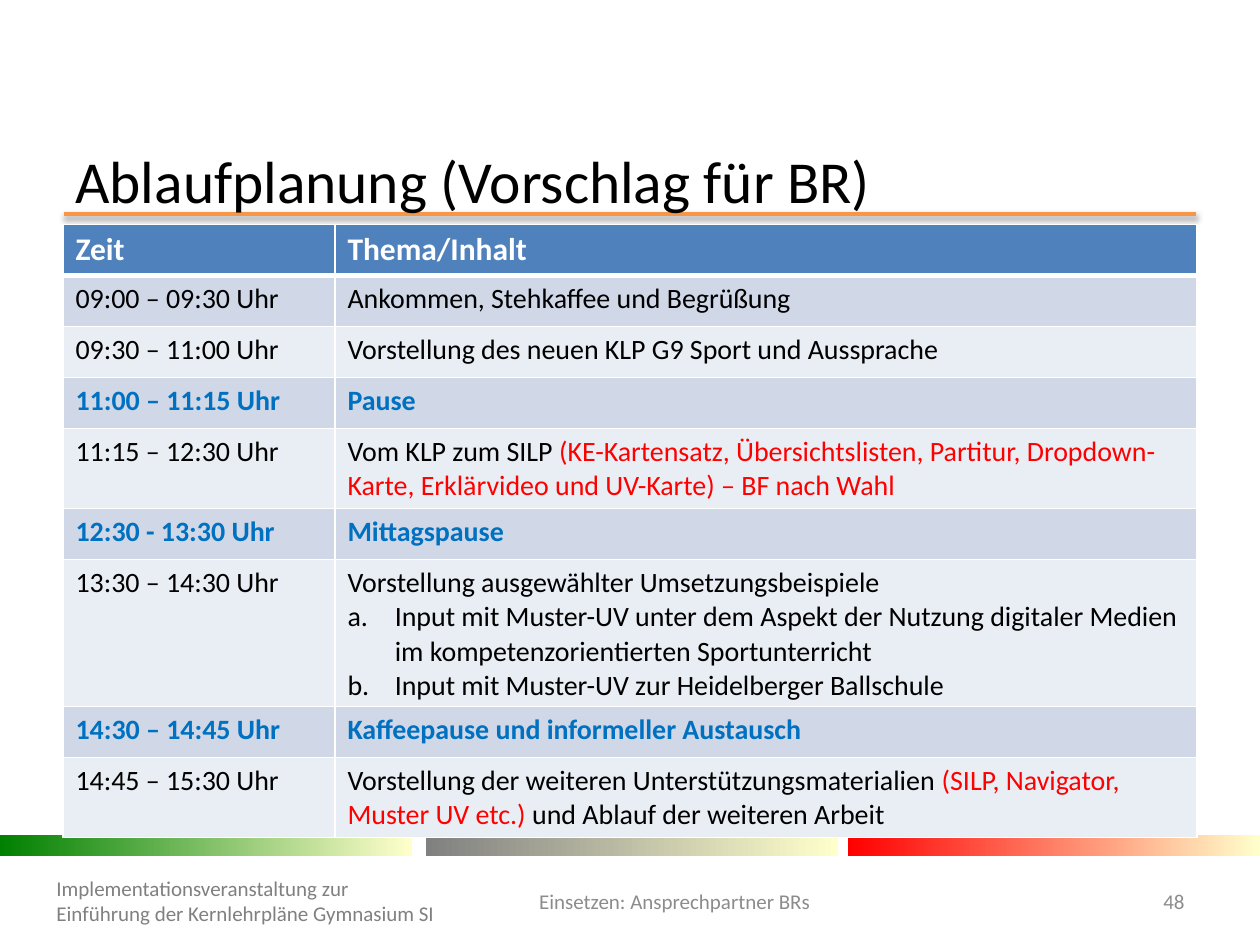
from typing import NamedTuple

from lxml.etree import SubElement as Sub
from pptx import Presentation
from pptx.dml.color import RGBColor as RGB
from pptx.enum.shapes import MSO_CONNECTOR as Link, MSO_SHAPE as Shape
from pptx.enum.text import MSO_ANCHOR as Anchor, PP_ALIGN as Align
from pptx.oxml.ns import qn
from pptx.util import Pt

FONT = "Calibri"
BLACK = RGB(0x00, 0x00, 0x00)
WHITE = RGB(0xFF, 0xFF, 0xFF)
RED = RGB(0xFF, 0x00, 0x00)
BLUE = RGB(0x00, 0x70, 0xC0)
GREEN = RGB(0x00, 0x80, 0x00)
GRAY = RGB(0x80, 0x80, 0x80)
SOFT = RGB(0x8C, 0x8C, 0x8C)
CREAM = RGB(0xFF, 0xFF, 0xCC)
AMBER = RGB(0xF7, 0x96, 0x46)
HEAD = RGB(0x4F, 0x81, 0xBD)
BANDS = RGB(0xE9, 0xED, 0xF4), RGB(0xD0, 0xD8, 0xE8)


class Run(NamedTuple):
    text: str
    color: RGB = BLACK


class Slot(NamedTuple):
    time: str
    runs: list[Run]
    steps: tuple[str, ...] = ()
    pause: bool = False


class Bar(NamedTuple):
    left: float
    color: RGB


class Label(NamedTuple):
    text: str
    left: float
    top: float
    width: float
    height: float
    size: float = 12
    color: RGB = SOFT
    align: Align = Align.LEFT


SLOTS = [
    Slot("09:00 – 09:30 Uhr", [Run("Ankommen, Stehkaffee und Begrüßung")]),
    Slot("09:30 – 11:00 Uhr",
         [Run("Vorstellung des neuen KLP G9 Sport und Aussprache")]),
    Slot("11:00 – 11:15 Uhr", [Run("Pause", BLUE)], pause=True),
    Slot("11:15 – 12:30 Uhr",
         [Run("Vom KLP zum SILP "),
          Run("(KE-Kartensatz, Übersichtslisten, Partitur, Dropdown-Karte, "
              "Erklärvideo und UV-Karte) – BF nach Wahl", RED)]),
    Slot("12:30 - 13:30 Uhr", [Run("Mittagspause", BLUE)], pause=True),
    Slot("13:30 – 14:30 Uhr",
         [Run("Vorstellung ausgewählter Umsetzungsbeispiele")],
         ("Input mit Muster-UV unter dem Aspekt der Nutzung digitaler Medien "
          "im kompetenzorientierten Sportunterricht",
          "Input mit Muster-UV zur Heidelberger Ballschule")),
    Slot("14:30 – 14:45 Uhr",
         [Run("Kaffeepause und informeller Austausch", BLUE)], pause=True),
    Slot("14:45 – 15:30 Uhr",
         [Run("Vorstellung der weiteren Unterstützungsmaterialien "),
          Run("(SILP, Navigator, Muster UV etc.) ", RED),
          Run("und Ablauf der weiteren Arbeit")]),
]
BARS = [Bar(0, GREEN), Bar(243.4, GRAY), Bar(484.6, RED)]
LABELS = [
    Label("Ablaufplanung (Vorschlag für BR)", 36, 88.5, 648, 28, 34, BLACK),
    Label("Implementationsveranstaltung zur Einführung der Kernlehrpläne "
          "Gymnasium SI", 25.2, 505.5, 232.6, 18.7, color=GRAY),
    Label("Einsetzen: Ansprechpartner BRs", 269.3, 500.4, 232.6, 28.8,
          align=Align.CENTER),
    Label("48", 638, 500.4, 46, 28.8, align=Align.RIGHT),
]


def write(para, text: str, *, size: float = 16, color: RGB = BLACK,
          bold: bool = False) -> None:
    run = para.add_run()
    run.text = text
    font = run.font
    font.name, font.size, font.bold = FONT, Pt(size), bold
    font.color.rgb = color


def draw_rule(slide) -> None:
    line = slide.shapes.add_connector(
        Link.STRAIGHT, Pt(36.6), Pt(122.4), Pt(683.4), Pt(122.4))
    line.line.color.rgb = AMBER
    line.line.width = Pt(2)
    # Soft shadow straight below the line
    props = line._element.spPr
    glow = Sub(Sub(props, qn("a:effectLst")), qn("a:outerShdw"),
               blurRad=str(Pt(3.1)), dist=str(Pt(1.6)), dir="5400000",
               rotWithShape="0")
    tint = Sub(glow, qn("a:srgbClr"), val=str(BLACK))
    Sub(tint, qn("a:alpha"), val="38000")


def draw_bar(slide, bar: Bar) -> None:
    box = slide.shapes.add_shape(
        Shape.RECTANGLE, Pt(bar.left), Pt(477.4), Pt(235.4), Pt(11.5))
    box.shadow.inherit = False
    box.line.fill.background()
    box.fill.gradient()
    box.fill.gradient_angle = 0
    for stop, color in zip(box.fill.gradient_stops, (bar.color, CREAM)):
        stop.color.rgb = color


def draw_label(slide, label: Label) -> None:
    box = slide.shapes.add_textbox(
        Pt(label.left), Pt(label.top), Pt(label.width), Pt(label.height))
    frame = box.text_frame
    frame.word_wrap = True
    frame.vertical_anchor = Anchor.MIDDLE
    para = frame.paragraphs[0]
    para.alignment = label.align
    write(para, label.text, size=label.size, color=label.color)


def style_cell(cell, fill: RGB, *, top: float = 1, base: float = 1) -> None:
    props = cell._tc.get_or_add_tcPr()
    for side, width in zip("LRTB", (1, 1, top, base)):
        edge = Sub(props, qn(f"a:ln{side}"), w=str(Pt(width)))
        Sub(Sub(edge, qn("a:solidFill")), qn("a:srgbClr"), val=str(WHITE))
    cell.fill.solid()
    cell.fill.fore_color.rgb = fill


def add_step(frame, text: str) -> None:
    para = frame.add_paragraph()
    props = para._p.get_or_add_pPr()
    props.set("marL", str(Pt(27)))
    props.set("indent", str(Pt(-27)))
    Sub(props, qn("a:buFont"), typeface=FONT)
    Sub(props, qn("a:buAutoNum"), type="alphaLcPeriod")
    write(para, text)


def draw_plan(slide) -> None:
    count = len(SLOTS) + 1
    table = slide.shapes.add_table(
        count, 2, Pt(36), Pt(128.2), Pt(648), Pt(29.2 * count)).table
    for column, width in zip(table.columns, (155.4, 492.6)):
        column.width = Pt(width)

    # Header row
    for cell, text in zip(table.rows[0].cells, ("Zeit", "Thema/Inhalt")):
        style_cell(cell, HEAD, base=3)
        write(cell.text_frame.paragraphs[0], text, size=18, color=WHITE,
              bold=True)

    # Time slots in alternating bands
    for row, slot in enumerate(SLOTS, 1):
        time, topic = table.rows[row].cells
        for cell in (time, topic):
            style_cell(cell, BANDS[row % 2], top=3 if row == 1 else 1)
        write(time.text_frame.paragraphs[0], slot.time,
              color=BLUE if slot.pause else BLACK, bold=slot.pause)
        for run in slot.runs:
            write(topic.text_frame.paragraphs[0], run.text, color=run.color,
                  bold=slot.pause)
        for step in slot.steps:
            add_step(topic.text_frame, step)


def main() -> None:
    deck = Presentation()
    deck.slide_width, deck.slide_height = Pt(720), Pt(540)
    slide = deck.slides.add_slide(deck.slide_layouts[6])
    draw_rule(slide)
    for bar in BARS:
        draw_bar(slide, bar)
    for label in LABELS:
        draw_label(slide, label)
    draw_plan(slide)
    deck.save("out.pptx")


if __name__ == "__main__":
    main()
